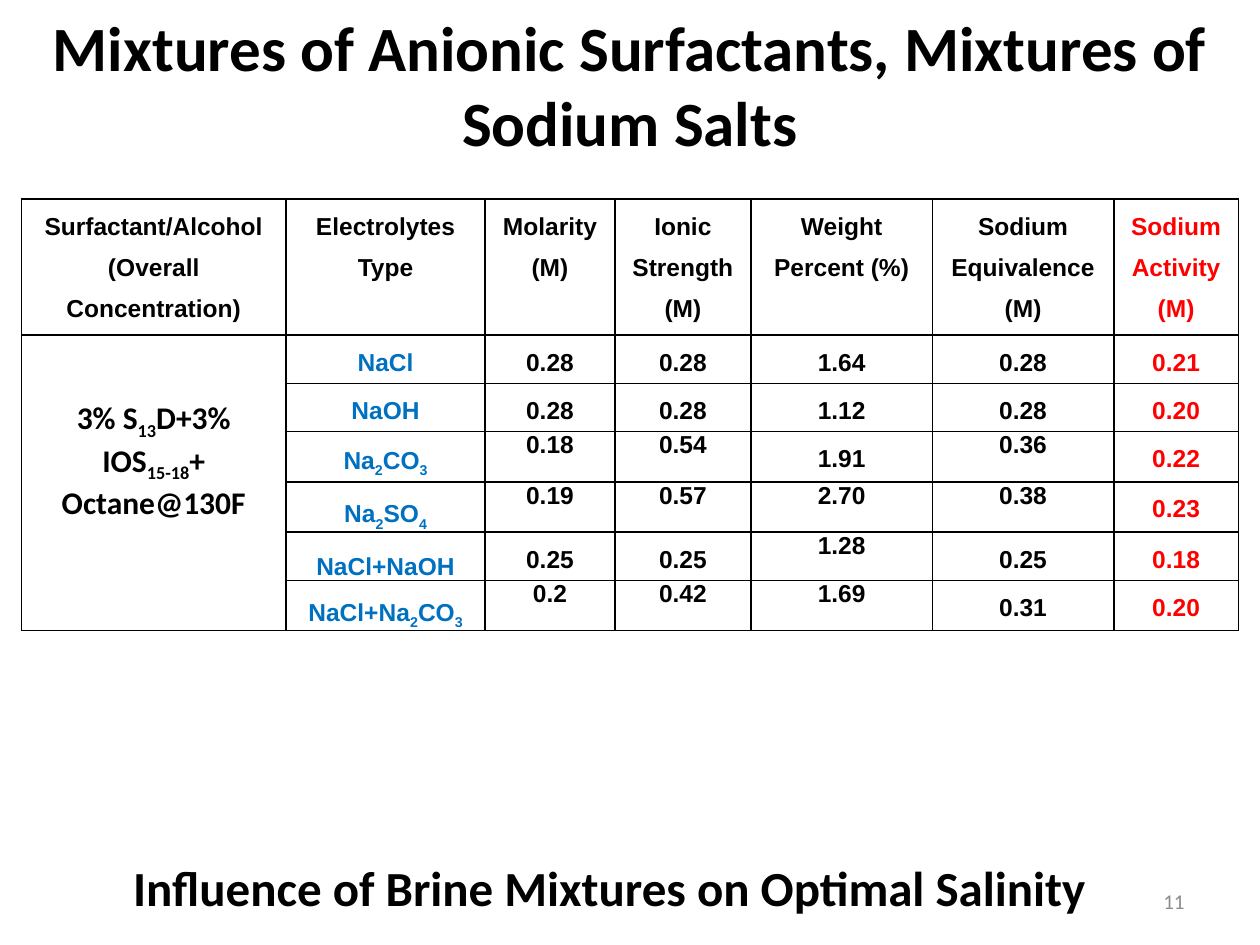
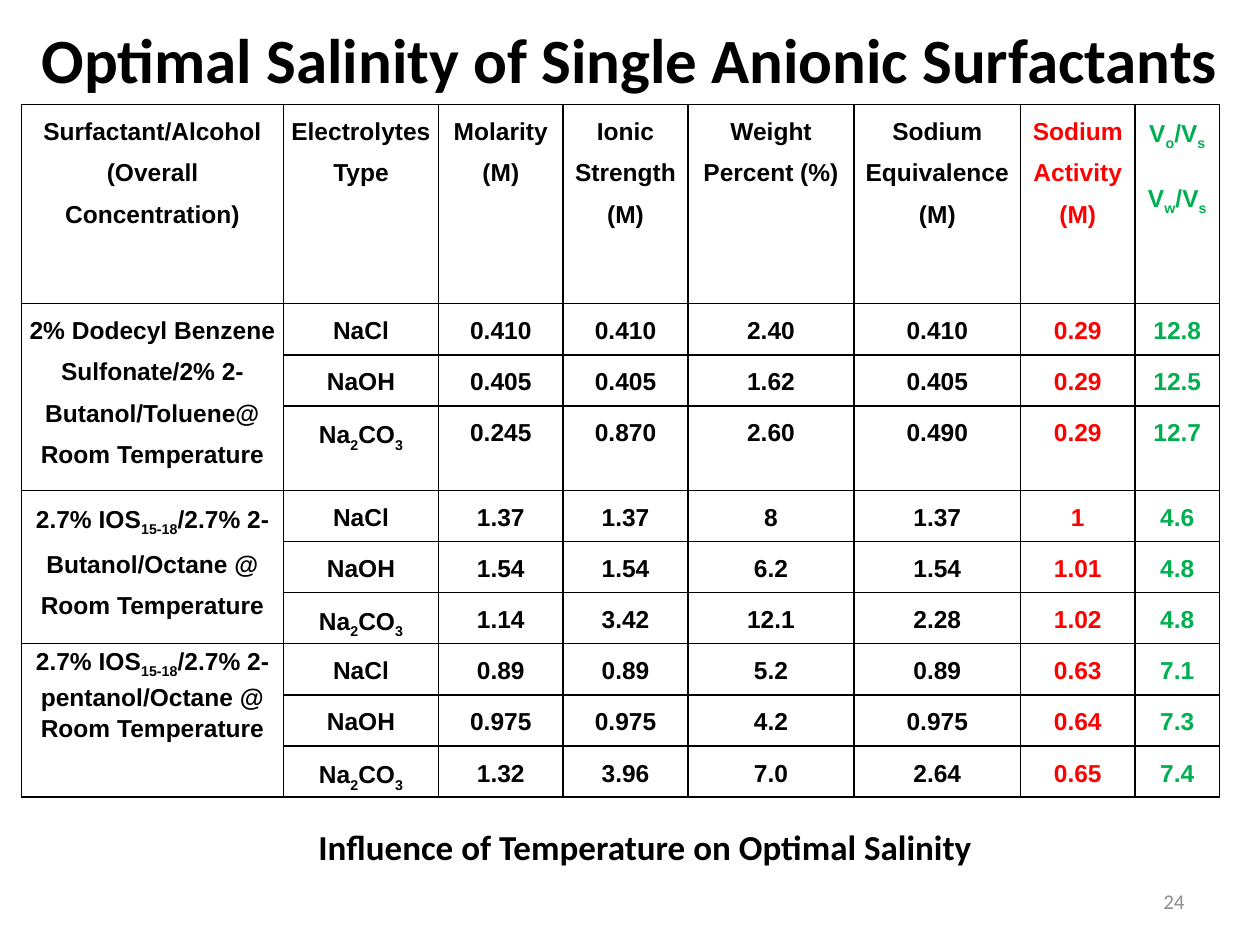
from lxml import etree
from pptx import Presentation
from pptx.dml.color import RGBColor
from pptx.enum import text
from pptx.oxml import ns
from pptx.util import Inches, Pt

BLACK = RGBColor(0x00, 0x00, 0x00)
RED = RGBColor(0xFF, 0x00, 0x00)
BLUE = RGBColor(0x00, 0x70, 0xC0)
GREEN = RGBColor(0x00, 0xB0, 0x50)
GRAY = RGBColor(0x8C, 0x8C, 0x8C)
HEAD_FONT, TABLE_FONT = "Calibri", "Arial"
CENTER, RIGHT = text.PP_ALIGN.CENTER, text.PP_ALIGN.RIGHT
MIDDLE, TOP, BOTTOM = text.MSO_ANCHOR.MIDDLE, text.MSO_ANCHOR.TOP, text.MSO_ANCHOR.BOTTOM
TABLE_LEFT = 0.17

# Text between tildes is subscript; a line break starts a new paragraph.
HEADERS = [
    "Surfactant/Alcohol (Overall Concentration)", "Electrolytes Type", "Molarity (M)",
    "Ionic Strength (M)", "Weight Percent (%)", "Sodium Equivalence (M)", "Sodium Activity (M)",
]

SLIDES = [
    {
        "title": ("Mixtures of Anionic Surfactants, Mixtures of Sodium Salts", (0, 0.25, 10, 0.83)),
        "caption": ("Influence of Brine Mixtures on Optimal Salinity", (0.75, 6.76, 8.17, 0.57), 28),
        "number": "11",
        "headers": HEADERS,
        "groups": [
            ("3% S~13~D+3%\nIOS~15-18~+ Octane@130F", [
                ("NaCl", "0.28", "0.28", "1.64", "0.28", "0.21"),
                ("NaOH", "0.28", "0.28", "1.12", "0.28", "0.20"),
                ("Na~2~CO~3~", "0.18", "0.54", "1.91", "0.36", "0.22"),
                ("Na~2~SO~4~", "0.19", "0.57", "2.70", "0.38", "0.23"),
                ("NaCl+NaOH", "0.25", "0.25", "1.28", "0.25", "0.18"),
                ("NaCl+Na~2~CO~3~", "0.2", "0.42", "1.69", "0.31", "0.20"),
            ]),
        ],
        "top": 1.58,
        "height": 3.38,
        "widths": [2.1, 1.58, 1.03, 1.08, 1.44, 1.44, 0.99],
        "row_heights": {0: 1.08},
        "colors": {1: BLUE, 6: RED},
        "tight": {3: (2, 3, 5), 4: (2, 3, 4, 5), 5: (4,), 6: (2, 3, 4)},
        "tight_spacing": 1.0,
        "bottom_rows": (4, 5, 6),
        "label": {"font": HEAD_FONT, "size": 18, "spacing": 1.0, "after": 0, "inset": 0.51},
    },
    {
        "title": ("Optimal Salinity of Single Anionic Surfactants", (0, 0, 10, 0.92)),
        "caption": ("Influence of Temperature on Optimal Salinity", (2.33, 6.5, 5.58, 0.44), 20),
        "number": "24",
        "headers": HEADERS + ["V~o~/V~s~\nV~w~/V~s~"],
        "groups": [
            ("2% Dodecyl Benzene Sulfonate/2% 2-Butanol/Toluene@ Room Temperature", [
                ("NaCl", "0.410", "0.410", "2.40", "0.410", "0.29", "12.8"),
                ("NaOH", "0.405", "0.405", "1.62", "0.405", "0.29", "12.5"),
                ("Na~2~CO~3~", "0.245", "0.870", "2.60", "0.490", "0.29", "12.7"),
            ]),
            ("2.7% IOS~15-18~/2.7% 2-Butanol/Octane @ Room Temperature", [
                ("NaCl", "1.37", "1.37", "8", "1.37", "1", "4.6"),
                ("NaOH", "1.54", "1.54", "6.2", "1.54", "1.01", "4.8"),
                ("Na~2~CO~3~", "1.14", "3.42", "12.1", "2.28", "1.02", "4.8"),
            ]),
            ("2.7% IOS~15-18~/2.7% 2-pentanol/Octane @ Room Temperature", [
                ("NaCl", "0.89", "0.89", "5.2", "0.89", "0.63", "7.1"),
                ("NaOH", "0.975", "0.975", "4.2", "0.975", "0.64", "7.3"),
                ("Na~2~CO~3~", "1.32", "3.96", "7.0", "2.64", "0.65", "7.4"),
            ]),
        ],
        "top": 0.83,
        "height": 5.5,
        "widths": [2.08, 1.23, 0.99, 0.99, 1.32, 1.32, 0.91, 0.67],
        "row_heights": {0: 1.58, 3: 0.67},
        "colors": {6: RED, 7: GREEN},
        "tight": {7: (0,)},
        "tight_spacing": 1.15,
        "bottom_rows": (),
        "label": {},
    },
]


def write(tf, content, font, size, color, bold=True, align=CENTER, spacing=None, after=None):
    tf.word_wrap = True
    for i, line in enumerate(content.split("\n")):
        p = tf.add_paragraph() if i else tf.paragraphs[0]
        p.alignment = align
        p.font.name, p.font.size, p.font.bold = font, Pt(size), bold
        p.font.color.rgb = color
        if spacing is not None:
            p.line_spacing = spacing
            p.space_after = Pt(after)
        for j, part in enumerate(line.split("~")):
            if part:
                r = p.add_run()
                r.text = part
                r.font.name, r.font.size, r.font.bold = font, Pt(size), bold
                r.font.color.rgb = color
                if j % 2:
                    r._r.get_or_add_rPr().set("baseline", "-25000")


def add_text(s, content, box, size, color=BLACK, anchor=TOP, **style):
    tf = s.shapes.add_textbox(*map(Inches, box)).text_frame
    tf.vertical_anchor = anchor
    write(tf, content, HEAD_FONT, size, color, **style)


def frame_cell(cell):
    tc_pr = cell._tc.get_or_add_tcPr()
    for side in ("lnL", "lnR", "lnT", "lnB"):
        ln = etree.SubElement(tc_pr, ns.qn("a:" + side), w=str(Pt(1)))
        fill = etree.SubElement(ln, ns.qn("a:solidFill"))
        etree.SubElement(fill, ns.qn("a:srgbClr"), val=str(BLACK))
    cell.fill.background()
    cell.margin_left = cell.margin_right = Inches(0.04)
    cell.margin_top = cell.margin_bottom = 0


def fill_cell(data, table, row, col, content, color, label=None):
    label = label or {}
    cell = table.cell(row, col)
    tight = col in data["tight"].get(row, ())
    spacing, after = (data["tight_spacing"], 0) if tight else (1.5, 10)
    cell.margin_top = Inches(label.get("inset", 0))
    if col == 1 and row in data["bottom_rows"]:
        cell.vertical_anchor = BOTTOM
    write(cell.text_frame, content, label.get("font", TABLE_FONT), label.get("size", 14), color,
          spacing=label.get("spacing", spacing), after=label.get("after", after))


def add_salinity_table(s, data):
    widths, fixed = data["widths"], data["row_heights"]
    rows = 1 + sum(len(members) for _, members in data["groups"])
    body_height = (data["height"] - sum(fixed.values())) / (rows - len(fixed))
    table = s.shapes.add_table(
        rows, len(widths), Inches(TABLE_LEFT), Inches(data["top"]),
        Inches(sum(widths)), Inches(data["height"])).table
    table.first_row = table.horz_banding = False
    for column, width in zip(table.columns, widths):
        column.width = Inches(width)
    for i, row in enumerate(table.rows):
        row.height = Inches(fixed.get(i, body_height))
    for cell in table.iter_cells():
        frame_cell(cell)

    for col, header in enumerate(data["headers"]):
        color = BLACK if col == 1 else data["colors"].get(col, BLACK)
        fill_cell(data, table, 0, col, header, color)
    row = 1
    for label, members in data["groups"]:
        table.cell(row, 0).merge(table.cell(row + len(members) - 1, 0))
        fill_cell(data, table, row, 0, label, BLACK, data["label"])
        for values in members:
            for col, value in enumerate(values, 1):
                fill_cell(data, table, row, col, value, data["colors"].get(col, BLACK))
            row += 1


def main():
    prs = Presentation()
    prs.slide_width, prs.slide_height = Inches(10), Inches(7.5)
    for data in SLIDES:
        s = prs.slides.add_slide(prs.slide_layouts[6])
        title, title_box = data["title"]
        add_text(s, title, title_box, 36, anchor=MIDDLE)
        add_salinity_table(s, data)
        add_text(s, *data["caption"])
        add_text(s, data["number"], (7.17, 6.95, 2.33, 0.4), 12, GRAY, MIDDLE,
                 bold=False, align=RIGHT)
    prs.save("out.pptx")


if __name__ == "__main__":
    main()
